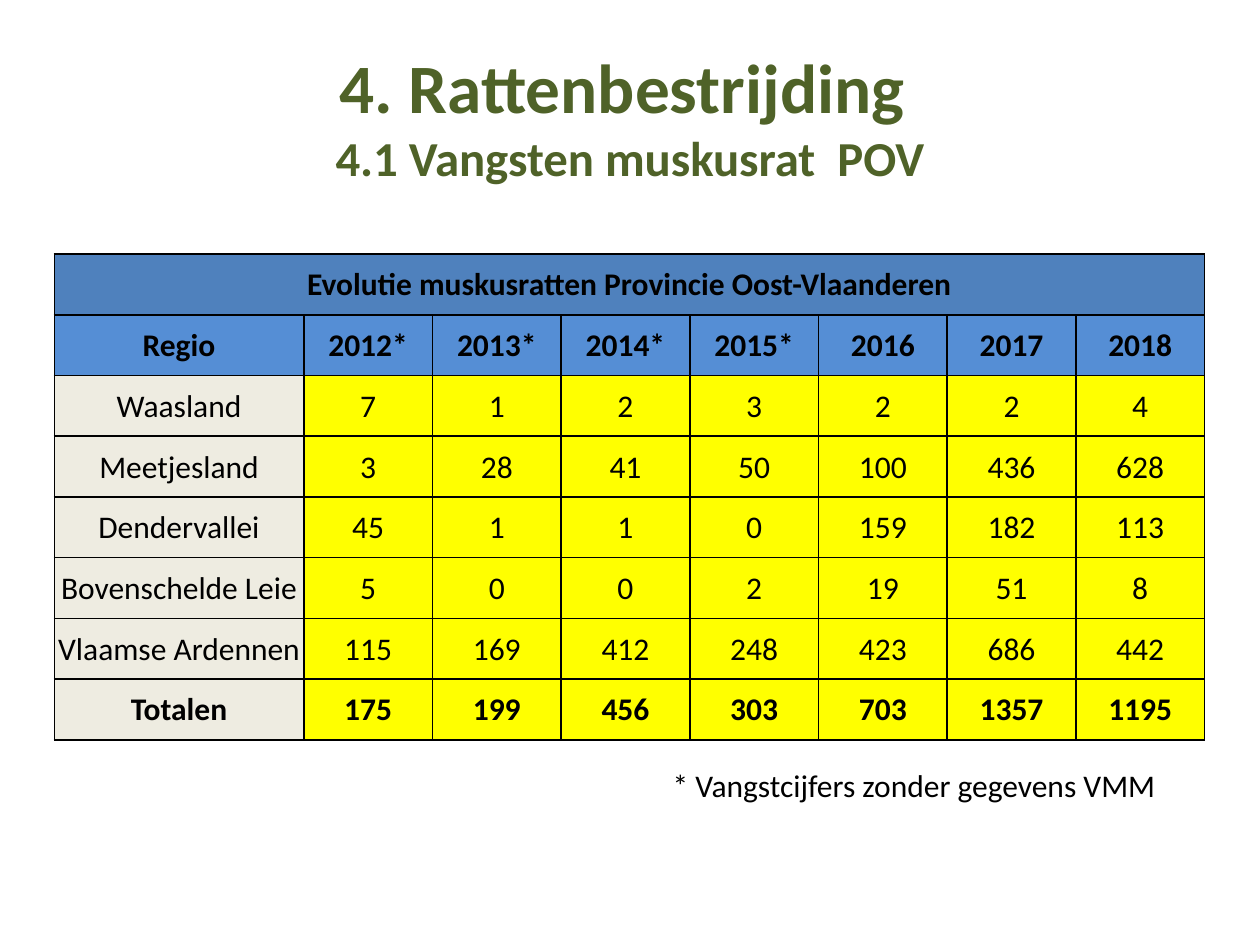
from lxml.etree import SubElement
from pptx import Presentation
from pptx.dml.color import RGBColor
from pptx.enum.text import MSO_ANCHOR, PP_ALIGN
from pptx.oxml import parse_xml
from pptx.oxml.ns import nsdecls, qn
from pptx.util import Pt

COLORS = {
    "title": "4F6228",
    "text": "000000",
    "border": "000000",
    "caption": "4F81BD",
    "header": "558ED5",
    "region": "EEECE1",
    "catch": "FFFF00",
}
CAPTION = "Evolutie muskusratten Provincie Oost-Vlaanderen"
CATCHES = [
    ["Regio", "2012*", "2013*", "2014*", "2015*", "2016", "2017", "2018"],
    ["Waasland", 7, 1, 2, 3, 2, 2, 4],
    ["Meetjesland", 3, 28, 41, 50, 100, 436, 628],
    ["Dendervallei", 45, 1, 1, 0, 159, 182, 113],
    ["Bovenschelde Leie", 5, 0, 0, 2, 19, 51, 8],
    ["Vlaamse Ardennen", 115, 169, 412, 248, 423, 686, 442],
    ["Totalen", 175, 199, 456, 303, 703, 1357, 1195],
]
REGION_WIDTH, YEAR_WIDTH, ROW_HEIGHT = 142.6, 73.54, 34.7


def write_text(paragraph, text, size=18, color="text", bold=False, align=PP_ALIGN.CENTER):
    paragraph.alignment = align
    run = paragraph.add_run()
    run.text = text
    run.font.name = "Calibri"
    run.font.size = Pt(size)
    run.font.bold = bold
    run.font.color.rgb = RGBColor.from_string(COLORS[color])


def add_box(slide, left, top, width, height):
    box = slide.shapes.add_textbox(Pt(left), Pt(top), Pt(width), Pt(height))
    return box.text_frame


def add_title(slide):
    frame = add_box(slide, 36, 21, 648, 90)
    frame.word_wrap = True
    frame.vertical_anchor = MSO_ANCHOR.MIDDLE
    heading = frame.paragraphs[0]
    write_text(heading, "4. Rattenbestrijding ", size=39.6, color="title", bold=True)
    heading.add_line_break()
    write_text(heading, "4.1 Vangsten muskusrat  POV", size=27.9, color="title", bold=True)


def add_footnote(slide):
    frame = add_box(slide, 377.3, 434.2, 302.4, 29)
    frame.word_wrap = False
    write_text(frame.paragraphs[0], "* Vangstcijfers zonder gegevens VMM", align=PP_ALIGN.LEFT)


def draw_borders(cell):
    """Put a 1 pt line on all four sides, ahead of the cell's fill."""
    properties = cell._tc.get_or_add_tcPr()
    for position, side in enumerate(("lnL", "lnR", "lnT", "lnB")):
        line = parse_xml(f'<a:{side} {nsdecls("a")} w="{Pt(1)}"/>')
        fill = SubElement(line, qn("a:solidFill"))
        SubElement(fill, qn("a:srgbClr"), val=COLORS["border"])
        properties.insert(position, line)


def format_cell(cell, fill):
    cell.fill.solid()
    cell.fill.fore_color.rgb = RGBColor.from_string(COLORS[fill])
    cell.vertical_anchor = MSO_ANCHOR.MIDDLE
    cell.margin_left = cell.margin_right = cell.margin_top = Pt(0.75)
    cell.margin_bottom = Pt(0)
    draw_borders(cell)


def add_catch_table(slide):
    row_count, column_count = len(CATCHES) + 1, len(CATCHES[0])
    width = REGION_WIDTH + YEAR_WIDTH * (column_count - 1)
    table = slide.shapes.add_table(
        row_count, column_count, Pt(31), Pt(145.2), Pt(width), Pt(ROW_HEIGHT * row_count)
    ).table
    for index, column in enumerate(table.columns):
        column.width = Pt(YEAR_WIDTH if index else REGION_WIDTH)
    for row in table.rows:
        row.height = Pt(ROW_HEIGHT)

    for cell in table.rows[0].cells:
        format_cell(cell, "caption")
    caption = table.cell(0, 0)
    caption.merge(table.cell(0, column_count - 1))
    write_text(caption.text_frame.paragraphs[0], CAPTION, bold=True)

    for row_index, values in enumerate(CATCHES, start=1):
        is_header = row_index == 1
        bold = is_header or row_index == len(CATCHES)
        for column_index, value in enumerate(values):
            cell = table.cell(row_index, column_index)
            body_fill = "catch" if column_index else "region"
            format_cell(cell, "header" if is_header else body_fill)
            write_text(cell.text_frame.paragraphs[0], str(value), bold=bold)


def main():
    presentation = Presentation()
    presentation.slide_width, presentation.slide_height = Pt(720), Pt(540)
    slide = presentation.slides.add_slide(presentation.slide_layouts[6])
    add_title(slide)
    add_footnote(slide)
    add_catch_table(slide)
    presentation.save("out.pptx")


if __name__ == "__main__":
    main()
